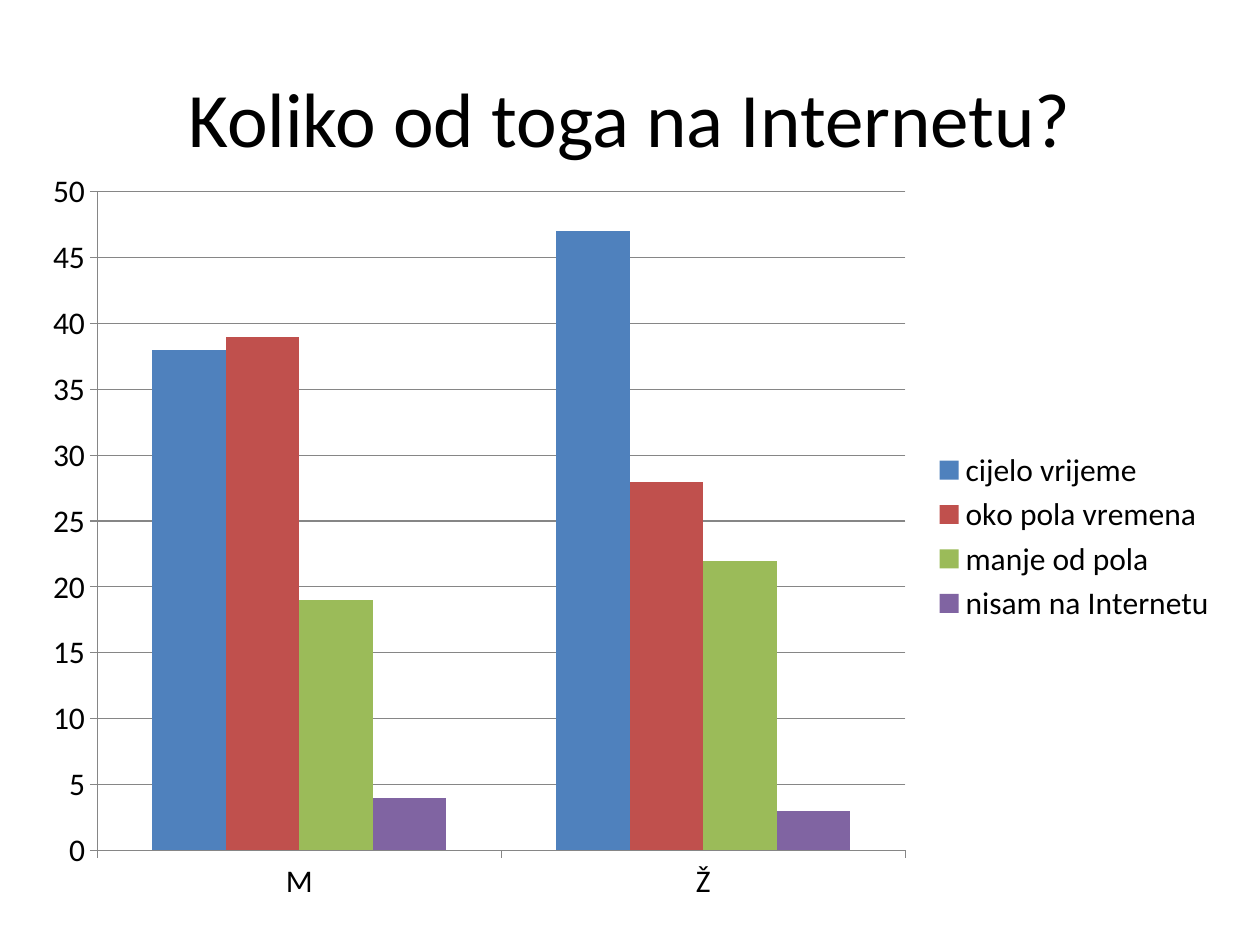
from pptx import Presentation
from pptx.chart.data import CategoryChartData
from pptx.dml.color import RGBColor
from pptx.enum.chart import XL_CHART_TYPE, XL_LEGEND_POSITION, XL_TICK_MARK
from pptx.enum.text import MSO_ANCHOR, PP_ALIGN
from pptx.util import Inches, Pt

COLUMNS = XL_CHART_TYPE.COLUMN_CLUSTERED
LEGEND_RIGHT = XL_LEGEND_POSITION.RIGHT
TICK_OUTSIDE = XL_TICK_MARK.OUTSIDE
MIDDLE = MSO_ANCHOR.MIDDLE
CENTER = PP_ALIGN.CENTER

FONT = "Calibri"
COLORS = {
    "text": "000000",
    "axis": "868686",
    "cijelo vrijeme": "4F81BD",
    "oko pola vremena": "C0504D",
    "manje od pola": "9BBB59",
    "nisam na Internetu": "8064A2",
}
GENDERS = ["M", "Ž"]
SHARES = {
    "cijelo vrijeme": (38, 47),
    "oko pola vremena": (39, 28),
    "manje od pola": (19, 22),
    "nisam na Internetu": (4, 3),
}


def color(name):
    return RGBColor.from_string(COLORS[name])


def style_font(font, size):
    font.name = FONT
    font.size = Pt(size)
    font.color.rgb = color("text")


def style_line(line):
    line.color.rgb = color("axis")
    line.width = Pt(0.75)


def place_title(slide, box, wording):
    title = slide.shapes.title
    title.left, title.top, title.width, title.height = box
    title.text_frame.text = wording
    title.text_frame.vertical_anchor = MIDDLE
    heading = title.text_frame.paragraphs[0]
    heading.alignment = CENTER
    style_font(heading.runs[0].font, 44)


def place_internet_chart(slide, box):
    shares = CategoryChartData()
    shares.categories = GENDERS
    for answer, values in SHARES.items():
        shares.add_series(answer, values)
    chart = slide.shapes.add_chart(COLUMNS, *box, shares).chart
    chart.has_title = False
    style_font(chart.font, 18)

    chart.has_legend = True
    chart.legend.position = LEGEND_RIGHT
    chart.legend.include_in_layout = False

    for axis in (chart.category_axis, chart.value_axis):
        axis.major_tick_mark = TICK_OUTSIDE
        style_line(axis.format.line)
    chart.value_axis.minimum_scale = 0
    chart.value_axis.maximum_scale = 50
    chart.value_axis.major_unit = 5
    chart.value_axis.tick_labels.number_format = "0"
    chart.value_axis.tick_labels.number_format_is_linked = False
    chart.value_axis.has_major_gridlines = True
    style_line(chart.value_axis.major_gridlines.format.line)

    plot = chart.plots[0]
    plot.gap_width = 150
    plot.overlap = 0
    plot.vary_by_categories = False
    for answer in plot.series:
        answer.format.fill.solid()
        answer.format.fill.fore_color.rgb = color(answer.name)


def main():
    presentation = Presentation()
    presentation.slide_width = Inches(10)
    presentation.slide_height = Inches(7.5)
    slide = presentation.slides.add_slide(presentation.slide_layouts[5])
    width, height = presentation.slide_width, presentation.slide_height

    def percent_box(left, top, across, down):
        return (int(width * left / 100), int(height * top / 100),
                int(width * across / 100), int(height * down / 100))

    place_title(slide, percent_box(5, 4, 90, 16.67),
                "Koliko od toga na Internetu?")
    place_internet_chart(slide, percent_box(2.3, 16.67, 95.3, 80.27))
    presentation.save("out.pptx")


if __name__ == "__main__":
    main()
